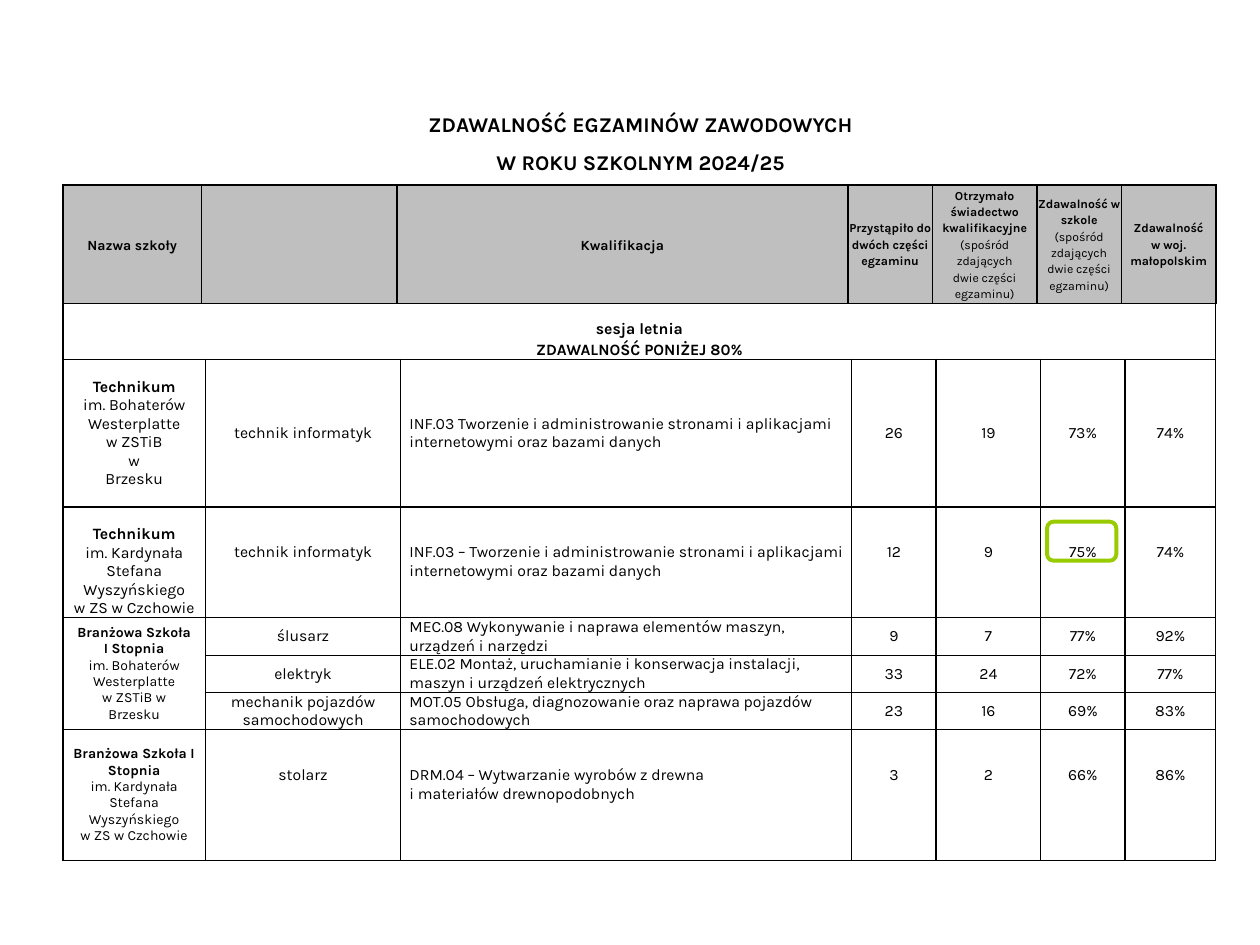
import pptx
import pptx.dml.color
import pptx.enum.shapes
import pptx.enum.text
import pptx.oxml.ns
import pptx.util
from lxml import etree

BLACK = pptx.dml.color.RGBColor(0x00, 0x00, 0x00)
WHITE = pptx.dml.color.RGBColor(0xFF, 0xFF, 0xFF)
GREY = pptx.dml.color.RGBColor(0xBF, 0xBF, 0xBF)
GREEN = pptx.dml.color.RGBColor(0x99, 0xCC, 0x00)

FONT = "Karla"
LEFT = 0.5
HEADER_TOP = 1.47
HEADER_HEIGHT = 0.9
RESULTS_TOP = HEADER_TOP + HEADER_HEIGHT
HEADER_COLUMNS = [1.1, 1.55, 3.58, 0.67, 0.83, 0.67, 0.75]
RESULT_COLUMNS = [1.13, 1.55, 3.58, 0.67, 0.83, 0.67, 0.72]
RESULT_ROWS = [0.48, 1.17, 0.88, 0.3, 0.29, 0.29, 1.04]
LINE_DROP = 0.145
LOWERED_ROWS = (2, 6)
RATE_COLUMN = 5

CENTER = pptx.enum.text.PP_ALIGN.CENTER
START = pptx.enum.text.PP_ALIGN.LEFT
MIDDLE = pptx.enum.text.MSO_ANCHOR.MIDDLE
TOP = pptx.enum.text.MSO_ANCHOR.TOP

AMONG = "(spośród zdających\vdwie części egzaminu)"
HEADINGS = [
    (["Nazwa szkoły"], 1),
    ([], 0),
    (["Kwalifikacja"], 1),
    (["Przystąpiło do dwóch części egzaminu"], 1),
    (["Otrzymało świadectwo kwalifikacyjne", AMONG], 1),
    (["Zdawalność w szkole", AMONG], 1),
    (["Zdawalność", "w woj. małopolskim"], 2),
]
SESSION = ["sesja letnia", "ZDAWALNOŚĆ PONIŻEJ 80%"]
SCHOOLS = {
    1: (["Technikum", "im. Bohaterów Westerplatte\vw ZSTiB\vw\vBrzesku"], 9, 0),
    2: (["Technikum", "im. Kardynała Stefana Wyszyńskiego", "w ZS w Czchowie"],
        9, LINE_DROP),
    3: (["Branżowa Szkoła\vI Stopnia",
         "im. Bohaterów Westerplatte\vw ZSTiB w\vBrzesku"], 8, 0),
    6: (["Branżowa Szkoła I Stopnia", "im. Kardynała Stefana Wyszyńskiego",
         "w ZS w Czchowie"], 8, 0),
}
RESULTS = [
    ("technik informatyk",
     "INF.03 Tworzenie i administrowanie stronami i aplikacjami "
     "internetowymi oraz bazami danych", "26", "19", "73%", "74%"),
    ("technik informatyk",
     "INF.03 – Tworzenie i administrowanie stronami i aplikacjami "
     "internetowymi oraz bazami danych", "12", "9", "75%", "74%"),
    ("ślusarz", "MEC.08 Wykonywanie i naprawa elementów maszyn, urządzeń i narzędzi",
     "9", "7", "77%", "92%"),
    ("elektryk",
     "ELE.02 Montaż, uruchamianie i konserwacja instalacji, "
     "maszyn i urządzeń elektrycznych", "33", "24", "72%", "77%"),
    ("mechanik pojazdów samochodowych",
     "MOT.05 Obsługa, diagnozowanie oraz naprawa pojazdów samochodowych",
     "23", "16", "69%", "83%"),
    ("stolarz", "DRM.04 – Wytwarzanie wyrobów z drewna\vi materiałów drewnopodobnych",
     "3", "2", "66%", "86%"),
]


def inches(value):
    return pptx.util.Inches(value)


def write_lines(frame, lines, size, bold_count=0, align=CENTER, spacing=1.0):
    for index, line in enumerate(lines):
        paragraph = frame.paragraphs[0] if index == 0 else frame.add_paragraph()
        paragraph.text = line
        paragraph.alignment = align
        paragraph.line_spacing = spacing
        for run in paragraph.runs:
            run.font.name = FONT
            run.font.size = pptx.util.Pt(size)
            run.font.bold = index < bold_count
            run.font.color.rgb = BLACK


def draw_borders(cell):
    properties = cell._tc.get_or_add_tcPr()
    qn = pptx.oxml.ns.qn
    for side in ("a:lnL", "a:lnR", "a:lnT", "a:lnB"):
        border = etree.SubElement(properties, qn(side), w=str(pptx.util.Pt(1)))
        fill = etree.SubElement(border, qn("a:solidFill"))
        etree.SubElement(fill, qn("a:srgbClr"), val=str(BLACK))


def add_grid(slide, top, columns, rows, fill):
    table = slide.shapes.add_table(
        len(rows), len(columns), inches(LEFT), inches(top),
        inches(sum(columns)), inches(sum(rows))).table
    table.first_row = False
    table.horz_banding = False
    for column, width in zip(table.columns, columns):
        column.width = inches(width)
    for row, height in zip(table.rows, rows):
        row.height = inches(height)
    for cell in table.iter_cells():
        draw_borders(cell)
        cell.fill.solid()
        cell.fill.fore_color.rgb = fill
    return table


def fill_cell(cell, lines, size, side=0.07, drop=0, anchor=MIDDLE, **style):
    cell.margin_left = cell.margin_right = inches(side)
    cell.margin_top = inches(drop)
    cell.margin_bottom = 0
    cell.vertical_anchor = anchor
    write_lines(cell.text_frame, lines, size, **style)


def add_title(slide):
    title = slide.shapes.add_textbox(
        inches(0.83), inches(0.83), inches(8.51), inches(0.61)).text_frame
    title.word_wrap = True
    title.vertical_anchor = MIDDLE
    write_lines(title, ["ZDAWALNOŚĆ EGZAMINÓW ZAWODOWYCH", "W ROKU SZKOLNYM 2024/25"],
                12, bold_count=2)
    title.paragraphs[1].space_before = pptx.util.Pt(7.5)


def add_results(slide):
    results = add_grid(slide, RESULTS_TOP, RESULT_COLUMNS, RESULT_ROWS, WHITE)
    results.cell(0, 0).merge(results.cell(0, len(RESULT_COLUMNS) - 1))
    results.cell(3, 0).merge(results.cell(5, 0))
    fill_cell(results.cell(0, 0), SESSION, 9, side=0.04, drop=LINE_DROP,
              bold_count=2, spacing=1.15)
    for row, (lines, size, drop) in SCHOOLS.items():
        fill_cell(results.cell(row, 0), lines, size, drop=drop, bold_count=1)
    for row, values in enumerate(RESULTS, start=1):
        lowered = row in LOWERED_ROWS
        for column, value in enumerate(values, start=1):
            fill_cell(results.cell(row, column), [value], 9,
                      drop=2 * LINE_DROP if lowered else 0,
                      anchor=TOP if lowered else MIDDLE,
                      align=START if column == 2 else CENTER)


def add_header(slide):
    header = add_grid(slide, HEADER_TOP, HEADER_COLUMNS, [HEADER_HEIGHT], GREY)
    for column, (lines, bold_count) in enumerate(HEADINGS):
        narrow = column > 2
        fill_cell(header.cell(0, column), lines, 7 if narrow else 8,
                  side=0 if narrow else 0.04, bold_count=bold_count, spacing=1.15)


def add_highlight(slide):
    rate_left = LEFT + sum(RESULT_COLUMNS[:RATE_COLUMN])
    row_top = RESULTS_TOP + sum(RESULT_ROWS[:2])
    highlight = slide.shapes.add_shape(
        pptx.enum.shapes.MSO_SHAPE.ROUNDED_RECTANGLE,
        inches(rate_left + 0.05), inches(row_top + 0.12), inches(0.55), inches(0.31))
    highlight.shadow.inherit = False
    highlight.fill.background()
    highlight.line.color.rgb = GREEN
    highlight.line.width = pptx.util.Pt(2.25)


def main():
    deck = pptx.Presentation()
    deck.slide_width = inches(10)
    deck.slide_height = inches(7.5)
    slide = deck.slides.add_slide(deck.slide_layouts[6])
    add_results(slide)
    add_title(slide)
    add_header(slide)
    add_highlight(slide)
    deck.save("out.pptx")


if __name__ == "__main__":
    main()
